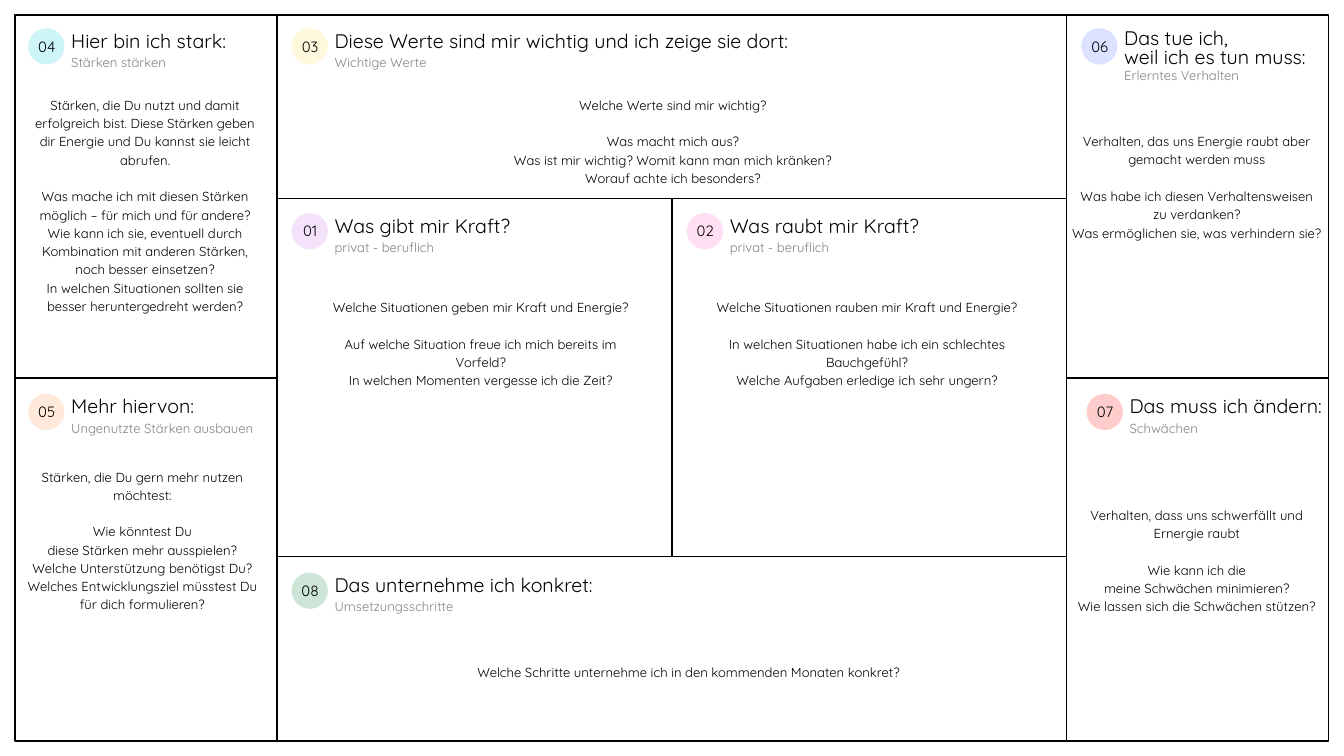
from pptx import Presentation
from pptx.dml.color import RGBColor
from pptx.enum.shapes import MSO_CONNECTOR, MSO_SHAPE
from pptx.enum.text import PP_ALIGN
from pptx.oxml.ns import qn
from pptx.util import Inches, Pt
from lxml import etree

LEFT, CENTER = PP_ALIGN.LEFT, PP_ALIGN.CENTER
STRAIGHT = MSO_CONNECTOR.STRAIGHT
RECTANGLE, OVAL = MSO_SHAPE.RECTANGLE, MSO_SHAPE.OVAL

FONT = "Quicksand"
SLIDE_W, SLIDE_H = 20, 11.25
COLORS = {
    "ink": "000000", "muted": "828282", "aqua": "5CE1E6", "yellow": "FFDE59",
    "orange": "FF914D", "green": "008037", "purple": "CB6CE6",
    "pink": "FF66C4", "blue": "5271FF", "red": "FF5757",
}

# Grid lines of the canvas, and where the badges sit in its columns and rows
COLS = (0.22, 4.12, SLIDE_W / 2, 15.87, 19.77)
ROWS = (0.22, 2.95, SLIDE_H / 2, 8.28, 11.03)
BADGE_X = (0.42, 4.34, 10.22, 16.09)
BADGE_Y = (0.42, 3.17, 5.86, 8.52)
BADGE = 0.54

# Each body is (left, top, width, height), an introduction and its questions
PANELS = [
    dict(number="04", col=0, row=0, color="aqua", alpha=30,
         title=["Hier bin ich stark:"], subtitle="Stärken stärken",
         box=(0.42, 1.41, 3.48, 3.25),
         intro="Stärken, die Du nutzt und damit erfolgreich bist. Diese Stärken "
               "geben dir Energie und Du kannst sie leicht abrufen.",
         questions=["Was mache ich mit diesen Stärken möglich – für mich und für andere?",
                    "Wie kann ich sie, eventuell durch Kombination mit anderen "
                    "Stärken, noch besser einsetzen?",
                    "In welchen Situationen sollten sie besser heruntergedreht werden?"]),
    dict(number="03", col=1, row=0, color="yellow", width=7.85,
         title=["Diese Werte sind mir wichtig und ich zeige sie dort:"],
         subtitle="Wichtige Werte", box=(7.33, 1.41, 5.37, 1.36),
         intro="Welche Werte sind mir wichtig?",
         questions=["Was macht mich aus?",
                    "Was ist mir wichtig? Womit kann man mich kränken?",
                    "Worauf achte ich besonders?"]),
    dict(number="06", col=3, row=0, color="blue",
         title=["Das tue ich,", "weil ich es tun muss:"],
         subtitle="Erlerntes Verhalten", box=(15.9, 1.95, 3.82, 2.17),
         intro="Verhalten, das uns Energie raubt aber gemacht werden muss",
         questions=["Was habe ich diesen Verhaltensweisen", "zu verdanken?",
                    "Was ermöglichen sie, was verhindern sie?"]),
    dict(number="01", col=1, row=1, color="purple",
         title=["Was gibt mir Kraft?"], subtitle="privat - beruflich",
         box=(4.88, 4.42, 4.55, 1.36),
         intro="Welche Situationen geben mir Kraft und Energie?",
         questions=["Auf welche Situation freue ich mich bereits im Vorfeld?",
                    "In welchen Momenten vergesse ich die Zeit?"]),
    dict(number="02", col=2, row=1, color="pink",
         title=["Was raubt mir Kraft?"], subtitle="privat - beruflich",
         box=(10.22, 4.42, 5.37, 1.36),
         intro="Welche Situationen rauben mir Kraft und Energie?",
         questions=["In welchen Situationen habe ich ein schlechtes Bauchgefühl?",
                    "Welche Aufgaben erledige ich sehr ungern?"]),
    dict(number="05", col=0, row=2, color="orange",
         title=["Mehr hiervon:"], subtitle="Ungenutzte Stärken ausbauen",
         box=(0.21, 6.94, 3.82, 2.17),
         intro="Stärken, die Du gern mehr nutzen möchtest:",
         questions=["Wie könntest Du", "diese Stärken mehr ausspielen?",
                    "Welche Unterstützung benötigst Du?",
                    "Welches Entwicklungsziel müsstest Du", "für dich formulieren?"]),
    dict(number="07", col=3, row=2, color="red", alpha=30, shift=0.08, width=2.9,
         title=["Das muss ich ändern:"], subtitle="Schwächen",
         box=(15.9, 7.51, 3.82, 1.63),
         intro="Verhalten, dass uns schwerfällt und Ernergie raubt",
         questions=["Wie kann ich die", "meine Schwächen minimieren?",
                    "Wie lassen sich die Schwächen stützen?"]),
    dict(number="08", col=1, row=3, color="green", width=3.93,
         title=["Das unternehme ich konkret:"], subtitle="Umsetzungsschritte",
         box=(6.95, 9.85, 6.6, 0.27),
         intro="Welche Schritte unternehme ich in den kommenden Monaten konkret?"),
]


def rgb(name):
    return RGBColor.from_string(COLORS[name])


def add_text(s, paragraphs, x, y, w, h, size=14, color="ink", align=LEFT,
             leading=19.6, gap=0):
    """Add a text box; gap is the space between first and second paragraph."""
    tf = s.shapes.add_textbox(Inches(x), Inches(y), Inches(w), Inches(h)).text_frame
    tf.word_wrap = True
    tf.margin_left = tf.margin_right = tf.margin_top = tf.margin_bottom = 0
    for i, text in enumerate(paragraphs):
        p = tf.add_paragraph() if i else tf.paragraphs[0]
        p.alignment = align
        p.line_spacing = Pt(leading)
        if i == 1 and gap:
            p.space_before = Pt(gap)
        r = p.add_run()
        r.text = text
        r.font.name, r.font.size = FONT, Pt(size)
        r.font.color.rgb = rgb(color)


def add_frame(s):
    x, y = COLS[0], ROWS[0]
    sp = s.shapes.add_shape(RECTANGLE, Inches(x), Inches(y),
                            Inches(COLS[-1] - x), Inches(ROWS[-1] - y))
    sp.shadow.inherit = False
    sp.fill.background()
    sp.line.color.rgb = rgb("ink")
    sp.line.width = Pt(1.75)
    return sp


def add_rule(s, x1, y1, x2, y2):
    line = s.shapes.add_connector(STRAIGHT, Inches(x1), Inches(y1),
                                  Inches(x2), Inches(y2))
    line.line.color.rgb = rgb("ink")
    line.line.width = Pt(1.5)
    etree.SubElement(line._element.spPr, qn("a:effectLst"))
    return line


def add_badge(s, x, y, number, color, alpha):
    sp = s.shapes.add_shape(OVAL, Inches(x), Inches(y), Inches(BADGE), Inches(BADGE))
    sp.shadow.inherit = False
    sp.fill.solid()
    sp.fill.fore_color.rgb = rgb(color)
    sp.line.fill.background()
    clr = sp._element.spPr.find(qn("a:solidFill")).find(qn("a:srgbClr"))
    etree.SubElement(clr, qn("a:alpha"), val=str(alpha * 1000))
    add_text(s, [number], x - 0.08, y + 0.09, 0.71, 0.31,
             size=16, align=CENTER, leading=22.4)


def add_panel(s, number, col, row, color, title, subtitle, box, intro,
              questions=(), alpha=20, shift=0, width=2.97):
    x, y = BADGE_X[col] + shift, BADGE_Y[row]
    add_badge(s, x, y, number, color, alpha)
    # A two-line title is set tighter and pushes the subtitle down
    two_lines = len(title) > 1
    title_dy, leading, subtitle_dy = (0.02, 21, 0.58) if two_lines else (-0.05, 29.4, 0.39)
    add_text(s, title, x + 0.64, y + title_dy, width, 0.4 * len(title),
             size=21, leading=leading)
    add_text(s, [subtitle], x + 0.64, y + subtitle_dy, width, 0.24,
             color="muted", leading=16.8)
    add_text(s, [intro, *questions], *box, align=CENTER, gap=19.6)


def main():
    prs = Presentation()
    prs.slide_width, prs.slide_height = Inches(SLIDE_W), Inches(SLIDE_H)
    s = prs.slides.add_slide(prs.slide_layouts[6])

    # Frame and dividing rules
    frame = add_frame(s)
    for x in (COLS[1], COLS[3]):
        add_rule(s, x, ROWS[0], x, ROWS[-1])
    for y in (ROWS[1], ROWS[3]):
        add_rule(s, COLS[1], y, COLS[3], y)
    add_rule(s, COLS[2], ROWS[1], COLS[2], ROWS[3])
    add_rule(s, COLS[0], ROWS[2], COLS[1], ROWS[2]).begin_connect(frame, 1)
    add_rule(s, COLS[3], ROWS[2], COLS[4], ROWS[2]).end_connect(frame, 3)

    # Numbered panels
    for panel in PANELS:
        add_panel(s, **panel)

    prs.save("out.pptx")


if __name__ == "__main__":
    main()
